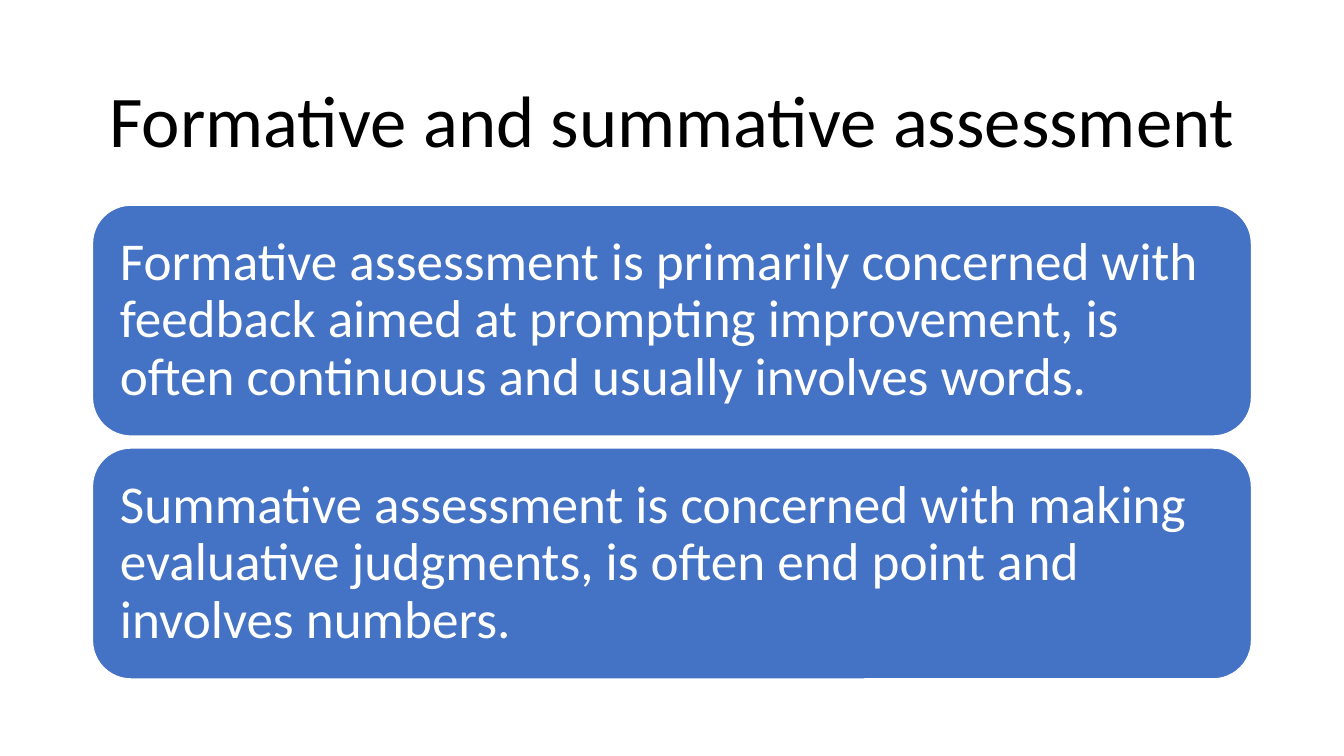
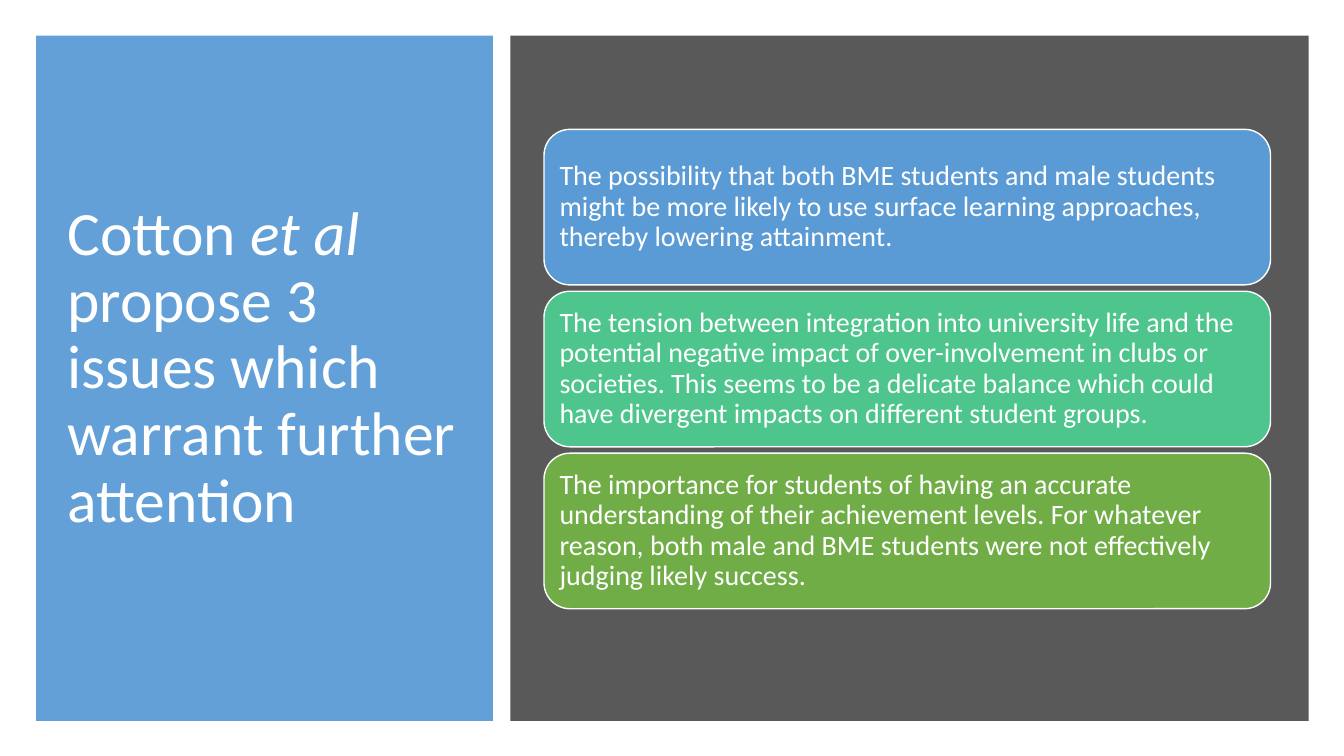
import pptx
import pptx.dml.color
import pptx.enum.shapes
import pptx.enum.text
import pptx.oxml.ns
import pptx.util
from lxml import etree
from pptx.util import Cm

FONT = "Calibri"
BLACK = "000000"
WHITE = "FFFFFF"
SKY = "5B9BD5"
BLUE = "4472C4"
MINT = "4DC58D"
GREEN = "70AD47"
GREY = "595959"


def colour(value):
    return pptx.dml.color.RGBColor.from_string(value)


class AssessmentDeck:
    """Hold the shared style, the deck and the slide being built."""

    def __init__(self):
        self.deck = pptx.Presentation()
        self.deck.slide_width = Cm(33.87)
        self.deck.slide_height = Cm(19.05)
        self.page = None

    def new_page(self):
        self.page = self.deck.slides.add_slide(self.deck.slide_layouts[6])

    def fill_text(self, box, spans, size, ink, centred=False):
        frame = box.text_frame
        frame.word_wrap = True
        frame.vertical_anchor = pptx.enum.text.MSO_ANCHOR.MIDDLE
        para = frame.paragraphs[0]
        align = pptx.enum.text.PP_ALIGN
        para.alignment = align.CENTER if centred else align.LEFT
        para.line_spacing = 0.9
        for text, italic in spans:
            span = para.add_run()
            span.text = text
            span.font.name = FONT
            span.font.size = pptx.util.Pt(size)
            span.font.italic = italic
            span.font.color.rgb = colour(ink)

    def title(self, left, top, width, height, spans, size, ink, centred=False):
        box = self.page.shapes.add_textbox(Cm(left), Cm(top), Cm(width), Cm(height))
        self.fill_text(box, spans, size, ink, centred)

    def shape(self, kind, left, top, width, height, fill):
        box = self.page.shapes.add_shape(kind, Cm(left), Cm(top), Cm(width), Cm(height))
        box.shadow.inherit = False
        box.fill.solid()
        box.fill.fore_color.rgb = colour(fill)
        return box

    def panel(self, left, width, fill, opacity=100):
        kind = pptx.enum.shapes.MSO_SHAPE.RECTANGLE
        box = self.shape(kind, left, 0.9, width, 17.27, fill)
        box.line.fill.background()
        if opacity < 100:
            tint = box.element.spPr.find(".//" + pptx.oxml.ns.qn("a:srgbClr"))
            alpha = etree.SubElement(tint, pptx.oxml.ns.qn("a:alpha"))
            alpha.set("val", str(opacity * 1000))

    def cards(self, left, top, width, height, gap, inset, size, items):
        kind = pptx.enum.shapes.MSO_SHAPE.ROUNDED_RECTANGLE
        for index, (fill, text) in enumerate(items):
            card_top = top + index * (height + gap)
            box = self.shape(kind, left, card_top, width, height, fill)
            box.line.color.rgb = colour(WHITE)
            box.line.width = pptx.util.Pt(1)
            frame = box.text_frame
            frame.margin_left = frame.margin_right = Cm(inset)
            frame.margin_top = frame.margin_bottom = Cm(inset)
            self.fill_text(box, [(text, False)], size, WHITE)


def build_definitions(show):
    show.new_page()
    heading = [("Formative and summative assessment", False)]
    show.title(2.33, 1.55, 29.21, 3.15, heading, 52, BLACK, centred=True)
    show.cards(2.33, 5.17, 29.21, 5.82, 0.3, 0.41, 38, [
        (BLUE, "Formative assessment is primarily concerned with feedback aimed at "
               "prompting improvement, is often continuous and usually involves words."),
        (BLUE, "Summative assessment is concerned with making evaluative judgments, "
               "is often end point and involves numbers."),
    ])


def build_issues(show):
    show.new_page()
    show.panel(0.91, 11.51, SKY, opacity=95)
    heading = [("Cotton ", False), ("et al ", True),
               ("propose 3 issues which warrant further attention", False)]
    show.title(1.45, 1.63, 10.34, 15.34, heading, 44, WHITE)
    show.panel(12.86, 20.12, GREY)
    show.cards(13.71, 3.26, 18.31, 3.92, 0.16, 0.2, 20, [
        (SKY, "The possibility that both BME students and male students might be more "
              "likely to use surface learning approaches, thereby lowering attainment."),
        (MINT, "The tension between integration into university life and the potential "
               "negative impact of over-involvement in clubs or societies. This seems to "
               "be a delicate balance which could have divergent impacts on different "
               "student groups."),
        (GREEN, "The importance for students of having an accurate understanding of "
                "their achievement levels. For whatever reason, both male and BME "
                "students were not effectively judging likely success."),
    ])


def main():
    show = AssessmentDeck()
    build_definitions(show)
    build_issues(show)
    show.deck.save("out.pptx")


if __name__ == "__main__":
    main()
